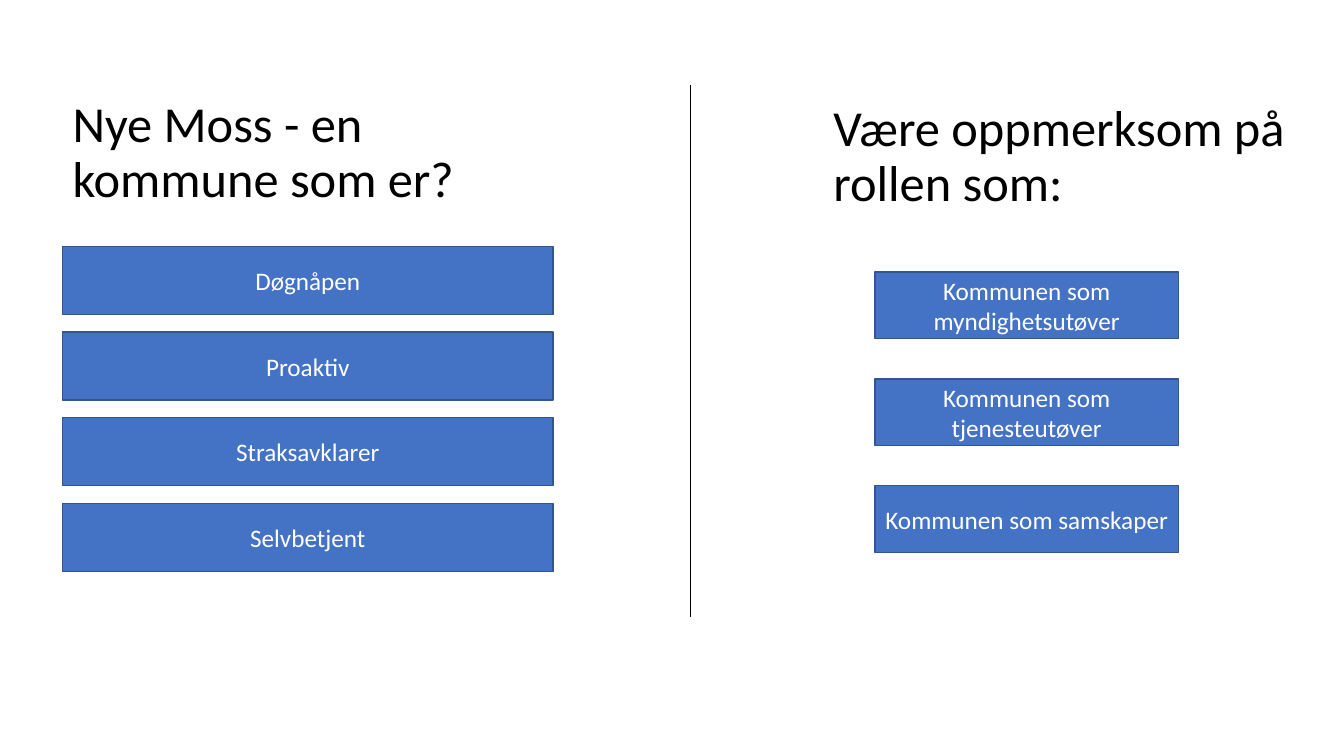
from dataclasses import dataclass

from lxml import etree
from pptx import Presentation
from pptx.dml.color import RGBColor
from pptx.enum import shapes, text
from pptx.oxml.ns import qn
from pptx.util import Pt


@dataclass(frozen=True)
class Theme:
    font: str = "Calibri"
    heading_size: float = 36
    box_size: float = 18
    ink: RGBColor = RGBColor(0, 0, 0)
    box_text: RGBColor = RGBColor(255, 255, 255)
    box_fill: RGBColor = RGBColor(0x44, 0x72, 0xC4)
    box_line: RGBColor = RGBColor(0x32, 0x54, 0x91)


THEME = Theme()
TRAITS = ["Døgnåpen", "Proaktiv", "Straksavklarer", "Selvbetjent"]
ROLES = [
    "Kommunen som myndighetsutøver",
    "Kommunen som tjenesteutøver",
    "Kommunen som samskaper",
]


def write_text(shape, content, *, size, color, align, line_spacing=1.0):
    frame = shape.text_frame
    frame.word_wrap = True
    frame.auto_size = text.MSO_AUTO_SIZE.NONE
    frame.vertical_anchor = text.MSO_ANCHOR.MIDDLE
    frame.text = content
    paragraph = frame.paragraphs[0]
    paragraph.alignment = align
    paragraph.line_spacing = line_spacing
    font = paragraph.runs[0].font
    font.name = THEME.font
    font.size = Pt(size)
    font.color.rgb = color


def format_heading(shape, content, left, top):
    shape.left, shape.top = Pt(left), Pt(top)
    shape.width, shape.height = Pt(340), Pt(104.4)
    write_text(shape, content, size=THEME.heading_size, color=THEME.ink,
               align=text.PP_ALIGN.LEFT, line_spacing=0.9)


def add_box_column(slide, labels, *, left, top, width, height, pitch):
    """Stack one box per label, with tops a fixed pitch apart."""
    for row, label in enumerate(labels):
        box = slide.shapes.add_shape(
            shapes.MSO_SHAPE.RECTANGLE,
            Pt(left), Pt(top + row * pitch), Pt(width), Pt(height))
        box.shadow.inherit = False
        box.fill.solid()
        box.fill.fore_color.rgb = THEME.box_fill
        box.line.color.rgb = THEME.box_line
        box.line.width = Pt(1)
        write_text(box, label, size=THEME.box_size, color=THEME.box_text,
                   align=text.PP_ALIGN.CENTER)


def add_divider(slide, x, top, bottom):
    divider = slide.shapes.add_connector(
        shapes.MSO_CONNECTOR.STRAIGHT, Pt(x), Pt(top), Pt(x), Pt(bottom))
    divider.line.color.rgb = THEME.ink
    divider.line.width = Pt(0.5)
    etree.SubElement(divider._element.spPr, qn("a:effectLst"))


def main():
    presentation = Presentation()
    presentation.slide_width, presentation.slide_height = Pt(960), Pt(540)
    title_only = presentation.slide_layouts[5]
    slide = presentation.slides.add_slide(title_only)

    format_heading(slide.shapes.title, "Nye Moss - en kommune som er?", 44.6, 57.6)
    add_box_column(slide, TRAITS, left=44.6, top=176, width=350.6, height=48.5,
                   pitch=61.2)
    add_box_column(slide, ROLES, left=625, top=194.4, width=216.7, height=47.5,
                   pitch=76.3)
    roles_heading = slide.shapes.add_textbox(0, 0, 0, 0)
    format_heading(roles_heading, "Være oppmerksom på rollen som:", 588.2, 60.5)
    add_divider(slide, 493.2, 60.5, 440.6)

    presentation.save("out.pptx")


if __name__ == "__main__":
    main()
